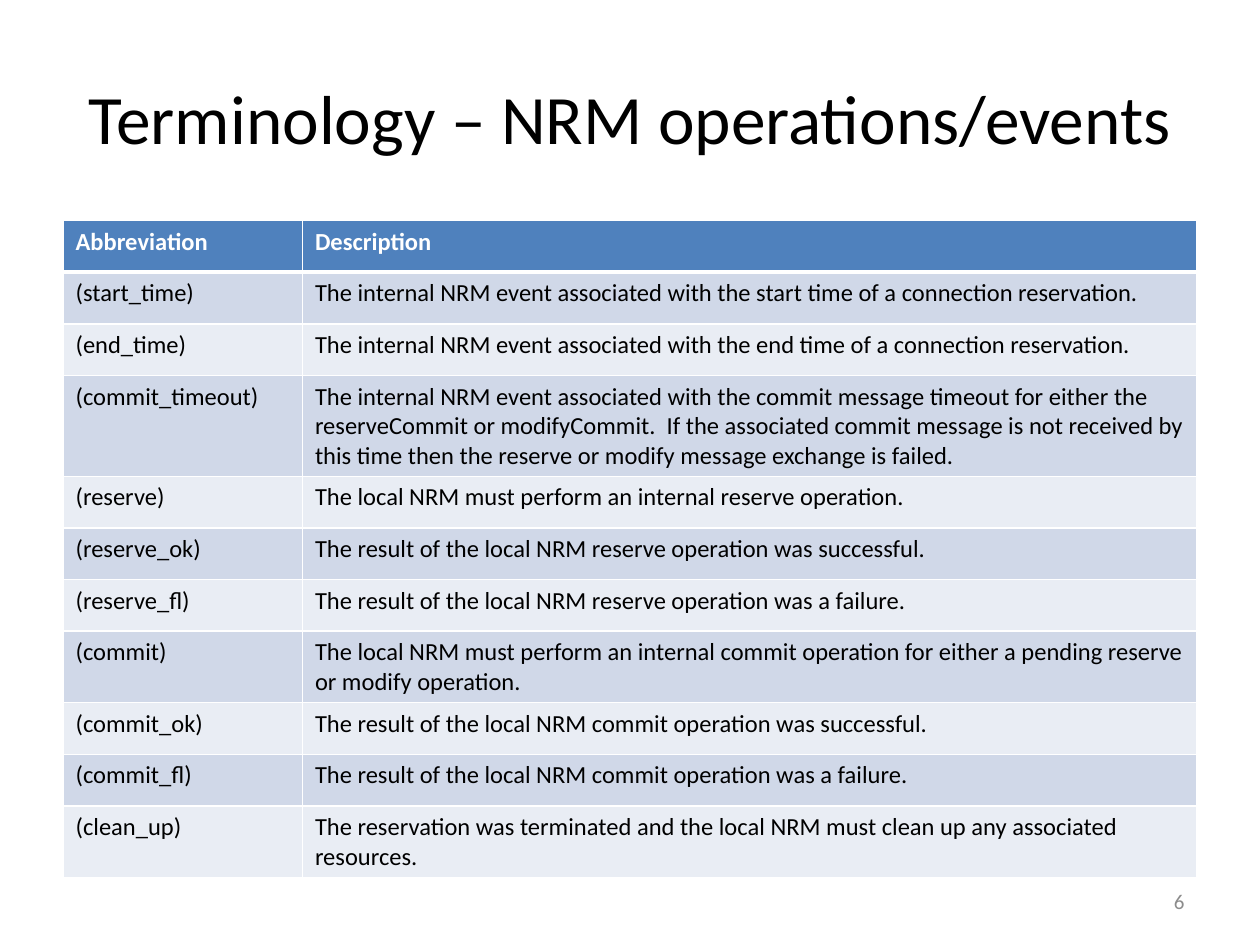
from lxml.etree import SubElement
from pptx import Presentation
from pptx.dml.color import RGBColor
from pptx.enum.text import MSO_ANCHOR as Anchor, PP_ALIGN as Align
from pptx.oxml.ns import qn
from pptx.util import Inches, Pt

FONT = "Calibri"
BLACK, WHITE, GREY = "000000", "FFFFFF", "8C8C8C"
HEADER_FILL, BAND_FILLS = "4F81BD", ("D0D8E8", "E9EDF4")
COLUMN_WIDTHS = (1.9, 7.1)
ROW_HEIGHT = 0.41
HEADINGS = ("Abbreviation", "Description")
TERMS = [
    ("(start_time)", "The internal NRM event associated with the start time of a connection reservation."),
    ("(end_time)", "The internal NRM event associated with the end time of a connection reservation."),
    ("(commit_timeout)",
     "The internal NRM event associated with the commit message timeout for either the "
     "reserveCommit or modifyCommit.  If the associated commit message is not received "
     "by this time then the reserve or modify message exchange is failed."),
    ("(reserve)", "The local NRM must perform an internal reserve operation."),
    ("(reserve_ok)", "The result of the local NRM reserve operation was successful."),
    ("(reserve_fl)", "The result of the local NRM reserve operation was a failure."),
    ("(commit)",
     "The local NRM must perform an internal commit operation for either a pending reserve "
     "or modify operation."),
    ("(commit_ok)", "The result of the local NRM commit operation was successful."),
    ("(commit_fl)", "The result of the local NRM commit operation was a failure."),
    ("(clean_up)",
     "The reservation was terminated and the local NRM must clean up any associated resources."),
]


def color(hex_value):
    """Return the colour for a hex string."""
    return RGBColor.from_string(hex_value)


def add_run(paragraph, text, size, hex_value, bold=False):
    """Add one formatted run to a paragraph."""
    run = paragraph.add_run()
    run.text = text
    run.font.name = FONT
    run.font.size = Pt(size)
    run.font.bold = bold
    run.font.color.rgb = color(hex_value)


def add_line(slide, box, text, size, hex_value, align):
    """Place one vertically centred line of text in a box."""
    frame = slide.shapes.add_textbox(*map(Inches, box)).text_frame
    frame.word_wrap = True
    frame.vertical_anchor = Anchor.MIDDLE
    paragraph = frame.paragraphs[0]
    paragraph.alignment = align
    add_run(paragraph, text, size, hex_value)


def set_borders(cell, bottom, top):
    """Draw white borders round a cell, with widths in points."""
    properties = cell._tc.get_or_add_tcPr()
    widths = {"a:lnL": 1, "a:lnR": 1, "a:lnT": top, "a:lnB": bottom}
    for position, (tag, width) in enumerate(widths.items()):
        border = SubElement(properties, qn(tag), w=str(Pt(width)))
        fill = SubElement(border, qn("a:solidFill"))
        SubElement(fill, qn("a:srgbClr"), val=WHITE)
        properties.insert(position, border)


def add_terms(slide, box):
    """Place the banded table of terms in a box."""
    rows = [HEADINGS, *TERMS]
    table = slide.shapes.add_table(len(rows), len(HEADINGS), *map(Inches, box)).table
    for column, width in zip(table.columns, COLUMN_WIDTHS):
        column.width = Inches(width)
    for index, texts in enumerate(rows):
        table.rows[index].height = Inches(ROW_HEIGHT)
        heading = index == 0
        fill = HEADER_FILL if heading else BAND_FILLS[(index - 1) % 2]
        for cell, text in zip(table.rows[index].cells, texts):
            cell.fill.solid()
            cell.fill.fore_color.rgb = color(fill)
            set_borders(cell, bottom=3 if heading else 1, top=3 if index == 1 else 1)
            add_run(cell.text_frame.paragraphs[0], text, 14, WHITE if heading else BLACK, heading)


def main():
    """Build and save the terminology slide."""
    deck = Presentation()
    deck.slide_width, deck.slide_height = Inches(10), Inches(7.5)
    slide = deck.slides.add_slide(deck.slide_layouts[6])
    add_line(slide, (0.5, 0.3, 9, 1.25), "Terminology – NRM operations/events", 39.6, BLACK, Align.CENTER)
    add_terms(slide, (0.5, 1.75, sum(COLUMN_WIDTHS), ROW_HEIGHT * (len(TERMS) + 1)))
    add_line(slide, (7.17, 6.95, 2.33, 0.4), "6", 12, GREY, Align.RIGHT)
    deck.save("out.pptx")


if __name__ == "__main__":
    main()
